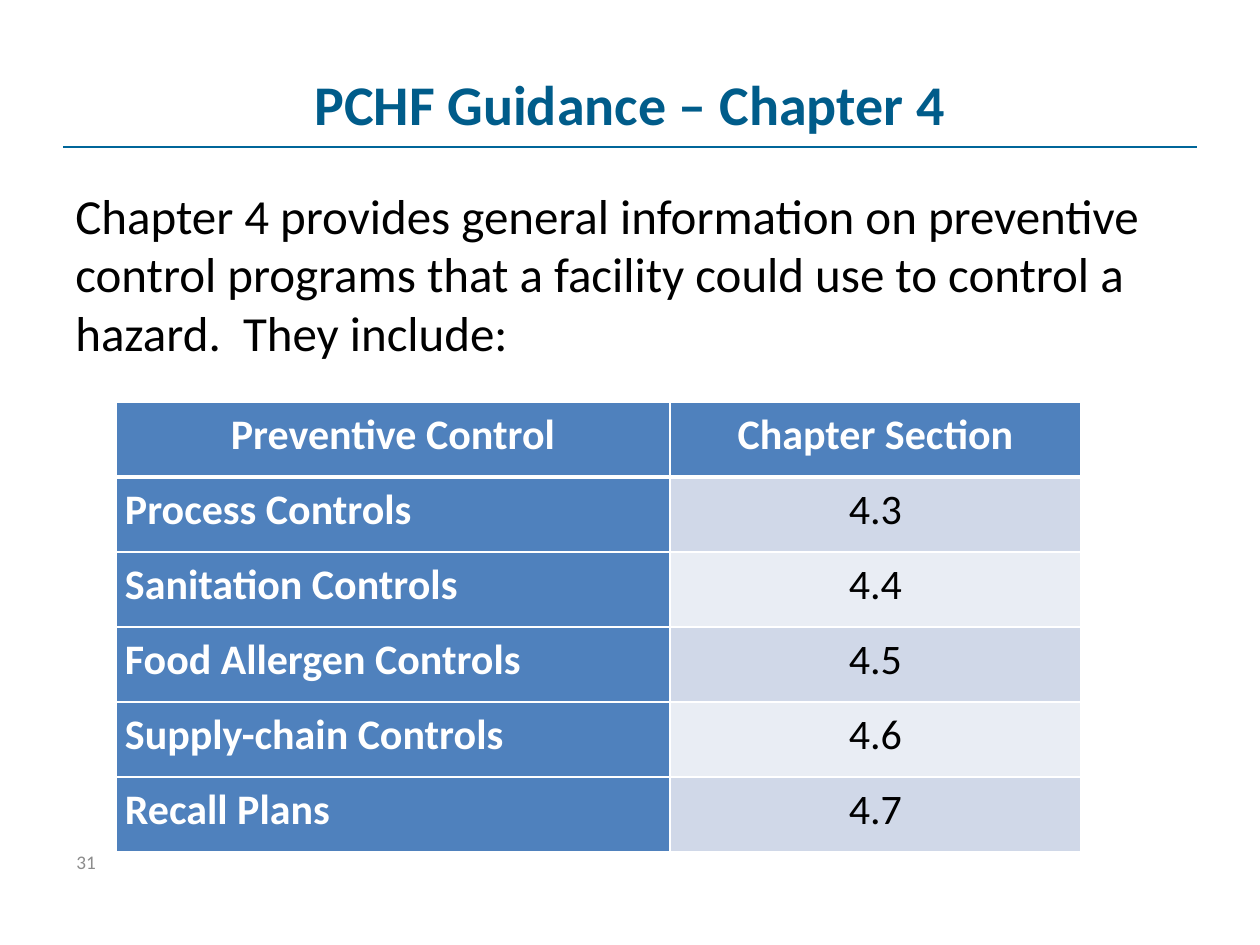
from lxml import etree
from pptx import Presentation
from pptx import util as u
from pptx.dml.color import RGBColor
from pptx.enum import shapes, text
from pptx.oxml.ns import qn

SCALE = 914400 / 126
FONT = "Calibri"
BLUE, WHITE, BLACK = "4F81BD", "FFFFFF", "000000"
BANDS = ("D0D8E8", "E9EDF4")
LEFT, MID = text.PP_ALIGN.LEFT, text.PP_ALIGN.CENTER

ROWS = [
    ("Preventive Control", "Chapter Section"),
    ("Process Controls", "4.3"),
    ("Sanitation Controls", "4.4"),
    ("Food Allergen Controls", "4.5"),
    ("Supply-chain Controls", "4.6"),
    ("Recall Plans", "4.7"),
]


def px(n):
    return u.Emu(round(n * SCALE))


def rgb(code):
    return RGBColor.from_string(code)


def write(frame, words, size, color=BLACK, bold=False, align=LEFT,
          after=0, lead=None):
    para = frame.paragraphs[0]
    para.alignment = align
    para.space_after = u.Pt(after)
    if lead:
        para.line_spacing = lead
    run = para.add_run()
    run.text = words
    font = run.font
    font.name, font.size, font.bold = FONT, u.Pt(size), bold
    font.color.rgb = rgb(color)


def box(slide, area, words, size, anchor=text.MSO_ANCHOR.TOP, **form):
    frame = slide.shapes.add_textbox(*map(px, area)).text_frame
    frame.word_wrap = True
    frame.vertical_anchor = anchor
    write(frame, words, size, **form)


def rule(slide, x1, x2, y, color, width):
    line = slide.shapes.add_connector(
        shapes.MSO_CONNECTOR.STRAIGHT, px(x1), px(y), px(x2), px(y))
    line.line.color.rgb = rgb(color)
    line.line.width = u.Pt(width)
    etree.SubElement(line._element.spPr, qn("a:effectLst"))


def edge(cell, **widths):
    # Borders must stand before the fill, in the order L, R, T, B
    props = cell._tc.get_or_add_tcPr()
    for spot, side in enumerate("LRTB"):
        line = etree.Element(qn("a:ln" + side),
                             w=str(u.Pt(widths.get(side, 1))))
        fill = etree.SubElement(line, qn("a:solidFill"))
        etree.SubElement(fill, qn("a:srgbClr"), val=WHITE)
        props.insert(spot, line)


def grid(slide, left, top, cols, high):
    area = (left, top, sum(cols), high * len(ROWS))
    table = slide.shapes.add_table(
        len(ROWS), len(cols), *map(px, area)).table
    table.first_col = True
    for col, wide in zip(table.columns, cols):
        col.width = px(wide)
    for r, row in enumerate(ROWS):
        table.rows[r].height = px(high)
        for c, words in enumerate(row):
            cell = table.cell(r, c)
            head = r == 0 or c == 0
            cell.margin_left = cell.margin_right = px(9)
            cell.margin_top = cell.margin_bottom = 0
            cell.fill.solid()
            cell.fill.fore_color.rgb = rgb(
                BLUE if head else BANDS[(r - 1) % 2])
            # Thick line under the header row
            edge(cell, T=3 if r == 1 else 1, B=3 if r == 0 else 1)
            write(cell.text_frame, words, 24, bold=head,
                  color=WHITE if head else BLACK,
                  align=LEFT if r and c == 0 else MID,
                  after=10, lead=1.15)


def main():
    deck = Presentation()
    deck.slide_width, deck.slide_height = px(1260), px(945)
    slide = deck.slides.add_slide(deck.slide_layouts[6])

    # Title and rule
    rule(slide, 63, 1197, 147, "006699", 0.75)
    box(slide, (63, 38, 1134, 130), "PCHF Guidance – Chapter 4", 32,
        anchor=text.MSO_ANCHOR.MIDDLE, color="005C8A", bold=True, align=MID)

    # Introduction
    box(slide, (63, 179, 1134, 665),
        "Chapter 4 provides general information on preventive control "
        "programs that a facility could use to control a hazard.  "
        "They include:", 28, after=18)

    # Table of controls
    grid(slide, 116, 402, (554, 411), 75)

    # Slide number
    box(slide, (64, 844, 294, 50), "31", 11, color="8C8C8C")

    deck.save("out.pptx")


if __name__ == "__main__":
    main()
